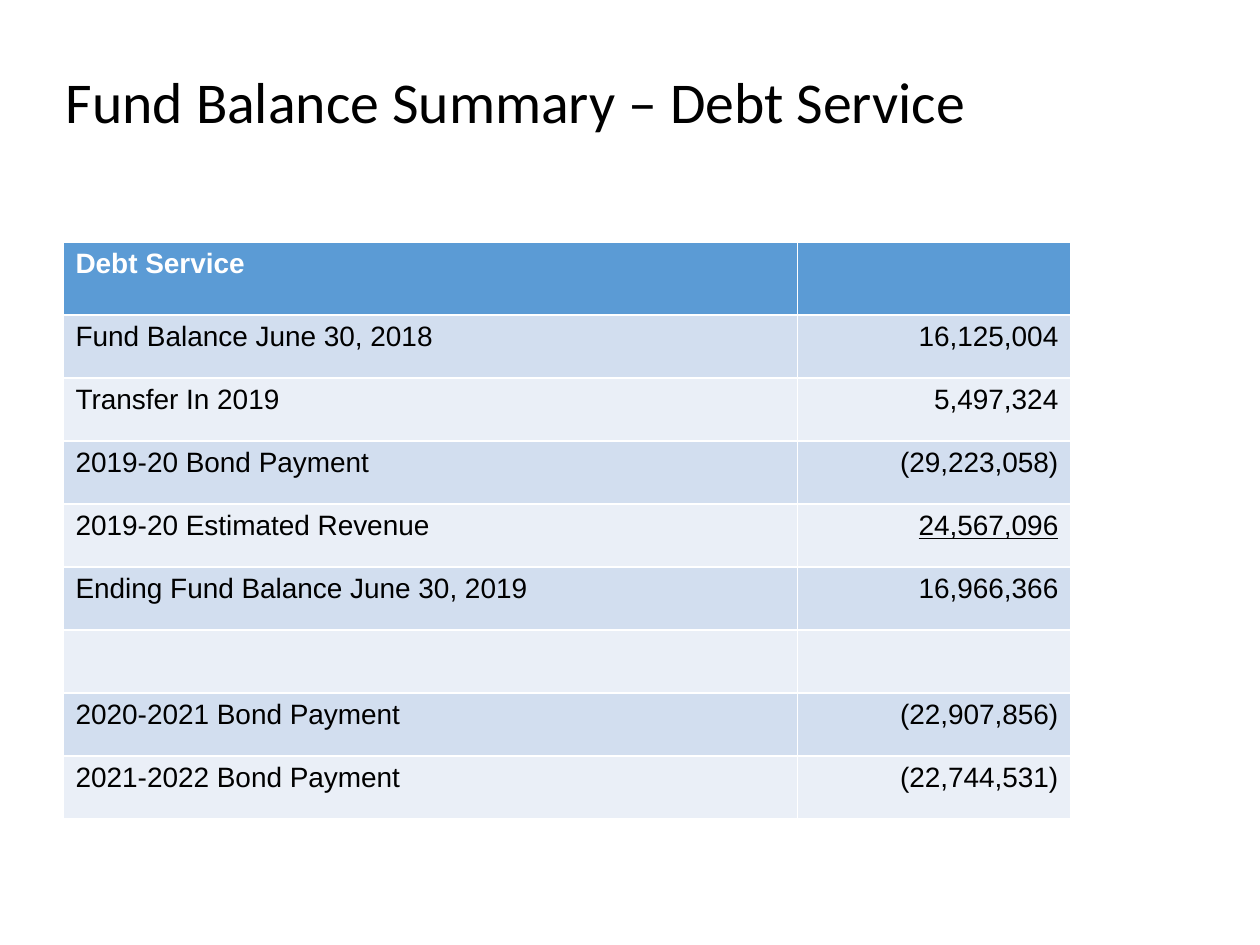
import dataclasses

import pptx
import pptx.dml.color
import pptx.enum.text
import pptx.util

SCALE = 9144
HUES = {
    "head": "5B9BD5",
    "odd": "D2DEEF",
    "even": "EAEFF7",
    "white": "FFFFFF",
    "black": "000000",
}
ALIGN = pptx.enum.text.PP_ALIGN


@dataclasses.dataclass
class Row:
    label: str = ""
    sum: str = ""
    line: bool = False


ROWS = [
    Row("Debt Service"),
    Row("Fund Balance June 30, 2018", "16,125,004"),
    Row("Transfer In 2019", "5,497,324"),
    Row("2019-20 Bond Payment", "(29,223,058)"),
    Row("2019-20 Estimated Revenue", "24,567,096", True),
    Row("Ending Fund Balance June 30, 2019", "16,966,366"),
    Row(),
    Row("2020-2021 Bond Payment", "(22,907,856)"),
    Row("2021-2022 Bond Payment", "(22,744,531)"),
]
COLS = [583, 217]
HEAD, STEP = 58, 50


def px(num: int) -> pptx.util.Emu:
    return pptx.util.Emu(num * SCALE)


def hue(name: str) -> pptx.dml.color.RGBColor:
    return pptx.dml.color.RGBColor.from_string(HUES[name])


def style(part, face: str, size: int, tint: str, bold: bool = False) -> None:
    for run in part.runs:
        run.font.name = face
        run.font.size = pptx.util.Pt(size)
        run.font.bold = bold
        run.font.color.rgb = hue(tint)


def add_title(slide, text: str) -> None:
    title = slide.shapes.title
    title.left, title.top, title.width, title.height = map(px, (42, 33, 900, 100))
    frame = title.text_frame
    frame.text = text
    frame.auto_size = pptx.enum.text.MSO_AUTO_SIZE.NONE
    frame.vertical_anchor = pptx.enum.text.MSO_ANCHOR.MIDDLE
    part = frame.paragraphs[0]
    part.alignment = ALIGN.LEFT
    part.line_spacing = 0.9
    style(part, "Calibri", 33, "black")


def fill_cell(cell, text: str, back: str, side: ALIGN, head: bool) -> None:
    cell.fill.solid()
    cell.fill.fore_color.rgb = hue(back)
    cell.text_frame.text = text
    part = cell.text_frame.paragraphs[0]
    part.alignment = side
    style(part, "Arial", 16, "white" if head else "black", head)


def add_grid(slide, rows: list[Row]) -> None:
    high = HEAD + STEP * (len(rows) - 1)
    grid = slide.shapes.add_table(
        len(rows), len(COLS), px(50), px(192), px(sum(COLS)), px(high)
    ).table
    for col, wide in zip(grid.columns, COLS):
        col.width = px(wide)
    for i, row in enumerate(rows):
        head = i == 0
        grid.rows[i].height = px(HEAD if head else STEP)
        back = "head" if head else "odd" if i % 2 else "even"
        fill_cell(grid.cell(i, 0), row.label, back, ALIGN.LEFT, head)
        fill_cell(grid.cell(i, 1), row.sum, back, ALIGN.RIGHT, head)
        if row.line:
            for run in grid.cell(i, 1).text_frame.paragraphs[0].runs:
                run.font.underline = True


def main() -> None:
    deck = pptx.Presentation()
    deck.slide_width, deck.slide_height = px(1000), px(750)
    slide = deck.slides.add_slide(deck.slide_layouts[5])
    add_title(slide, "Fund Balance Summary – Debt Service")
    add_grid(slide, ROWS)
    deck.save("out.pptx")


if __name__ == "__main__":
    main()
